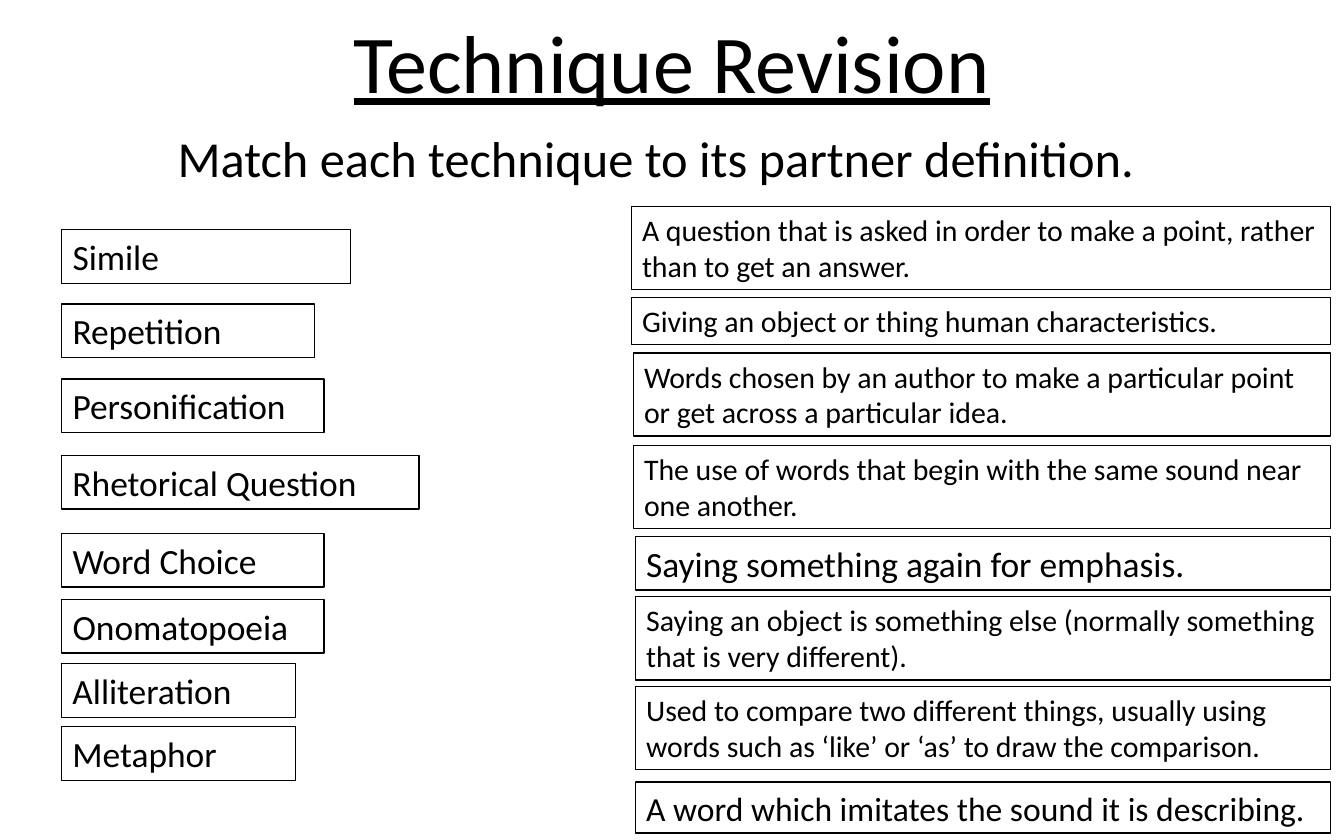
from pptx import Presentation
from pptx.dml.color import RGBColor
from pptx.enum.shapes import MSO_SHAPE as SHAPE
from pptx.enum.text import MSO_ANCHOR as ANCHOR, MSO_AUTO_SIZE as FIT, PP_ALIGN as ALIGN
from pptx.util import Pt

BLACK = RGBColor(0, 0, 0)
LEFT_X, LEFT_H, RIGHT_EDGE = 33.1, 28.8, 712.8
INSETS = {"margin_left": Pt(5.76), "margin_right": Pt(5.76),
          "margin_top": Pt(2.88), "margin_bottom": Pt(2.88)}

prs = Presentation()
prs.slide_width, prs.slide_height = Pt(720), Pt(450)
s = prs.slides.add_slide(prs.slide_layouts[6])


def write(sp, text, size, align, **frame):
    tf = sp.text_frame
    for name, value in {"word_wrap": True, **frame}.items():
        setattr(tf, name, value)
    p = tf.paragraphs[0]
    p.alignment = align
    r = p.add_run()
    r.text = text
    for name, value in {"name": "Calibri", "size": Pt(size)}.items():
        setattr(r.font, name, value)
    r.font.color.rgb = BLACK
    return r


def add_card(x, y, w, h, text, size):
    sp = s.shapes.add_shape(SHAPE.RECTANGLE, Pt(x), Pt(y), Pt(w), Pt(h))
    sp.shadow.inherit = False
    sp.fill.background()
    sp.line.color.rgb = BLACK
    sp.line.width = Pt(0.75)
    write(sp, text, size, ALIGN.LEFT, vertical_anchor=ANCHOR.TOP,
          auto_size=FIT.SHAPE_TO_FIT_TEXT, **INSETS)


title = s.shapes.add_textbox(Pt(49.7), Pt(0), Pt(620.6), Pt(64.8))
r = write(title, "Technique Revision", 44, ALIGN.CENTER, vertical_anchor=ANCHOR.MIDDLE)
r.font.underline = True

task = s.shapes.add_textbox(Pt(31.7), Pt(64.8), Pt(639.4), Pt(40))
write(task, "Match each technique to its partner definition.", 27, ALIGN.CENTER)

techniques = [
    ("Simile", 123, 154.8),
    ("Repetition", 162.8, 135.4),
    ("Personification", 203, 140.4),
    ("Rhetorical Question", 244, 191.5),
    ("Word Choice", 285.8, 140.4),
    ("Onomatopoeia", 321.1, 140.4),
    ("Alliteration", 355.5, 125.3),
    ("Metaphor", 389.3, 125.3),
]
for text, y, w in techniques:
    add_card(LEFT_X, y, w, LEFT_H, text, 19)

definitions = [
    ("A question that is asked in order to make a point, rather than to get an answer.",
     338.2, 110.7, 44.6, 16),
    ("Giving an object or thing human characteristics.", 338.2, 159.3, 25.2, 16),
    ("Words chosen by an author to make a particular point or get across a particular idea.",
     339.3, 189, 44.6, 16),
    ("The use of words that begin with the same sound near one another.",
     339.3, 238.6, 44.6, 16),
    ("Saying something again for emphasis.", 340.4, 287.3, 28.8, 19),
    ("Saying an object is something else (normally something that is very different).",
     340.4, 319.7, 44.6, 16),
    ("Used to compare two different things, usually using words such as ‘like’ or ‘as’ "
     "to draw the comparison.", 340.4, 367.8, 44.6, 16),
    ("A word which imitates the sound it is describing.", 340.4, 419, 27.4, 18),
]
for text, x, y, h, size in definitions:
    add_card(x, y, RIGHT_EDGE - x, h, text, size)

prs.save("out.pptx")
